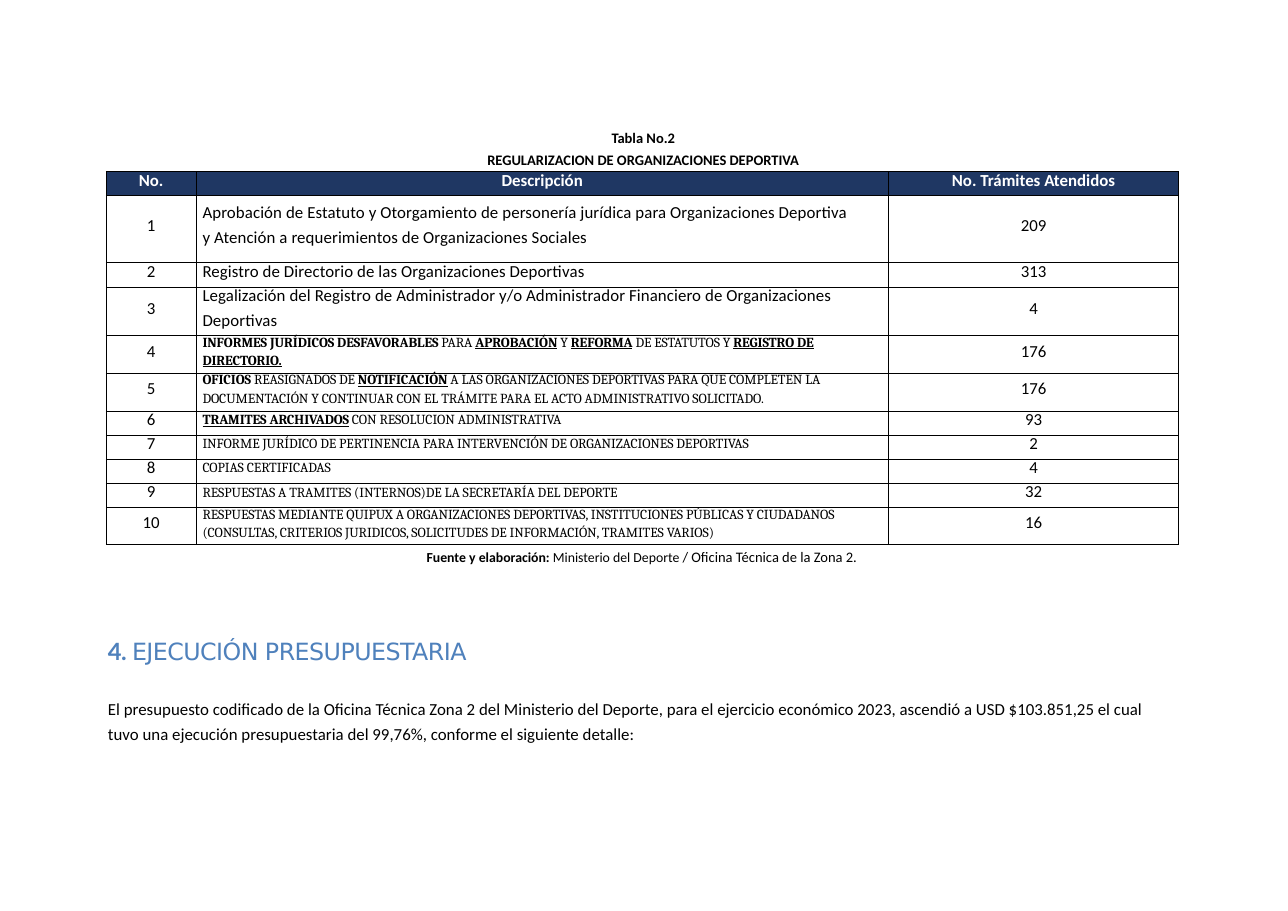
import pptx
import pptx.util
import pptx.dml.color
import pptx.enum.text
import pptx.oxml
import pptx.oxml.ns

Cm, Pt = pptx.util.Cm, pptx.util.Pt
ALIGN = pptx.enum.text.PP_ALIGN
COLORS = {"black": "000000", "white": "FFFFFF", "navy": "1F3763", "blue": "4F81BC"}
BOLD = {"bold": True}
KEY = {"bold": True, "underline": True}


def rgb(name):
    return pptx.dml.color.RGBColor.from_string(COLORS[name])


class Page:
    """Holds the text style and the current slide."""

    def __init__(self, s, font="Calibri", color="black"):
        self.s, self.font, self.color = s, font, color

    def paragraph(self, tf, runs, size, first=True, font=None, color=None, bold=False,
                  align=ALIGN.LEFT, line=None, before=None, spc=0):
        p = tf.paragraphs[0] if first else tf.add_paragraph()
        p.alignment = align
        if line:
            p.line_spacing = line
        if before:
            p.space_before = Pt(before)
        p.font.name, p.font.size = font or self.font, Pt(size)
        p.font.bold, p.font.color.rgb = bold, rgb(color or self.color)
        for text, style in runs:
            r = p.add_run()
            r.text = text
            for key, value in style.items():
                setattr(r.font, key, value)
            if spc:
                r._r.get_or_add_rPr().set("spc", str(spc))

    def text(self, x, y, w, h):
        tf = self.s.shapes.add_textbox(Cm(x), Cm(y), Cm(w), Cm(h)).text_frame
        tf.word_wrap = True
        tf.margin_left = tf.margin_right = tf.margin_top = tf.margin_bottom = 0
        return tf

    def table(self, x, y, widths, heights):
        shape = self.s.shapes.add_table(len(heights), len(widths), Cm(x), Cm(y),
                                        Cm(sum(widths)), Cm(sum(heights)))
        table = shape.table
        table.first_row = table.horz_banding = False
        for column, w in zip(table.columns, widths):
            column.width = Cm(w)
        for row, h in zip(table.rows, heights):
            row.height = Cm(h)
        for cell in table.iter_cells():
            self.frame(cell)
        return table

    def frame(self, cell):
        cell.margin_left = cell.margin_right = cell.margin_top = 0
        cell.margin_bottom = Cm(0.1)
        cell.vertical_anchor = pptx.enum.text.MSO_ANCHOR.MIDDLE
        for side in ("lnL", "lnR", "lnT", "lnB"):
            cell._tc.get_or_add_tcPr().append(pptx.oxml.parse_xml(
                f'<a:{side} {pptx.oxml.ns.nsdecls("a")} w="{Pt(0.75)}"><a:solidFill>'
                f'<a:srgbClr val="{COLORS["black"]}"/></a:solidFill></a:{side}>'))
        cell.fill.background()

    def center_cell(self, cell, text, **style):
        self.paragraph(cell.text_frame, [(text, {})], 11, align=ALIGN.CENTER,
                       line=Pt(12), **style)


prs = pptx.Presentation()
prs.slide_width, prs.slide_height = Cm(29.7), Cm(21)
page = Page(prs.slides.add_slide(prs.slide_layouts[6]))

# Table title
tf = page.text(11.05, 2.97, 7.57, 0.9)
page.paragraph(tf, [("Tabla No.2", {})], 9.5, bold=True, align=ALIGN.CENTER)
page.paragraph(tf, [("REGULARIZACION DE ORGANIZACIONES DEPORTIVA", {})], 9.5, first=False,
               bold=True, align=ALIGN.CENTER, before=2.9)

# Procedures: font, lines of runs, number attended
PROCEDURES = [
    ("Calibri", [[("Aprobación de Estatuto y Otorgamiento de personería jurídica para "
                   "Organizaciones Deportiva y Atención a requerimientos de "
                   "Organizaciones Sociales", {})]], 209),
    ("Calibri", [[("Registro de Directorio de las Organizaciones Deportivas", {})]], 313),
    ("Calibri", [[("Legalización del Registro de Administrador y/o Administrador "
                   "Financiero de Organizaciones", {})], [("Deportivas", {})]], 4),
    ("Cambria", [[("INFORMES JURÍDICOS DESFAVORABLES ", BOLD), ("PARA ", {}),
                  ("APROBACIÓN", KEY), (" Y ", {}), ("REFORMA", KEY),
                  (" DE ESTATUTOS Y ", {}), ("REGISTRO DE", KEY)],
                 [("DIRECTORIO.", KEY)]], 176),
    ("Cambria", [[("OFICIOS ", BOLD), ("REASIGNADOS DE ", {}), ("NOTIFICACIÓN", KEY),
                  (" A LAS ORGANIZACIONES DEPORTIVAS PARA QUE COMPLETEN LA", {})],
                 [("DOCUMENTACIÓN Y CONTINUAR CON EL TRÁMITE PARA EL ACTO "
                   "ADMINISTRATIVO SOLICITADO.", {})]], 176),
    ("Cambria", [[("TRAMITES ARCHIVADOS", KEY),
                  (" CON RESOLUCION ADMINISTRATIVA", {})]], 93),
    ("Cambria", [[("INFORME JURÍDICO DE PERTINENCIA PARA INTERVENCIÓN DE "
                   "ORGANIZACIONES DEPORTIVAS", {})]], 2),
    ("Cambria", [[("COPIAS CERTIFICADAS", {})]], 4),
    ("Cambria", [[("RESPUESTAS A TRAMITES (INTERNOS)DE LA SECRETARÍA DEL DEPORTE", {})]], 32),
    ("Cambria", [[("RESPUESTAS MEDIANTE QUIPUX A ORGANIZACIONES DEPORTIVAS, "
                   "INSTITUCIONES PÚBLICAS Y CIUDADANOS", {})],
                 [("(CONSULTAS, CRITERIOS JURIDICOS, SOLICITUDES DE INFORMACIÓN, "
                   "TRAMITES VARIOS)", {})]], 16),
]
# Size, line height, gap between lines and letter spacing by font
LINE_STYLES = {"Calibri": (11, 12, 4.4, 5), "Cambria": (9, 9.5, 2.3, -6)}

# Table
table = page.table(2.45, 3.96, [2.07, 15.97, 6.69],
                   [0.55, 1.55, 0.57, 1.11, 0.87, 0.87, 0.55, 0.56, 0.55, 0.57, 0.85])
for col, title in enumerate(["No.", "Descripción", "No. Trámites Atendidos"]):
    cell = table.cell(0, col)
    cell.fill.solid()
    cell.fill.fore_color.rgb = rgb("navy")
    page.center_cell(cell, title, color="white", bold=True)
for row, (font, lines, attended) in enumerate(PROCEDURES, 1):
    page.center_cell(table.cell(row, 0), str(row))
    page.center_cell(table.cell(row, 2), str(attended))
    cell = table.cell(row, 1)
    cell.margin_left = Cm(0.15)
    size, height, gap, spc = LINE_STYLES[font]
    for i, runs in enumerate(lines):
        page.paragraph(cell.text_frame, runs, size, first=i == 0, font=font, spc=spc,
                       line=1.2 if row == 1 else Pt(height), before=gap if i else None)

# The first procedure wraps before the right edge
table.cell(1, 1).margin_right = Cm(0.86)
table.cell(1, 1).margin_bottom = Cm(0.28)

# Table source
tf = page.text(9.7, 12.64, 10.2, 0.45)
page.paragraph(tf, [("Fuente y elaboración: ", {"bold": True, "size": Pt(9)}),
                    ("Ministerio del Deporte ", {"size": Pt(9)}),
                    ("/ Oficina Técnica de la Zona 2.", {})], 9.5, align=ALIGN.CENTER)

# Budget section
tf = page.text(2.49, 14.68, 24.4, 2.5)
page.paragraph(tf, [("4. ", {"name": "Lato", "bold": True}),
                    ("EJECUCIÓN PRESUPUESTARIA", {})],
               15.5, font="DejaVu Sans", color="blue", spc=-35)
page.paragraph(tf, [("El presupuesto codificado de la Oficina Técnica Zona 2 del Ministerio "
                     "del Deporte, para el ejercicio económico 2023, ascendió a USD "
                     "$103.851,25 el cual tuvo una ejecución presupuestaria del 99,76%, "
                     "conforme el siguiente detalle:", {})],
               11, first=False, line=1.2, before=19.5)

prs.save("out.pptx")
